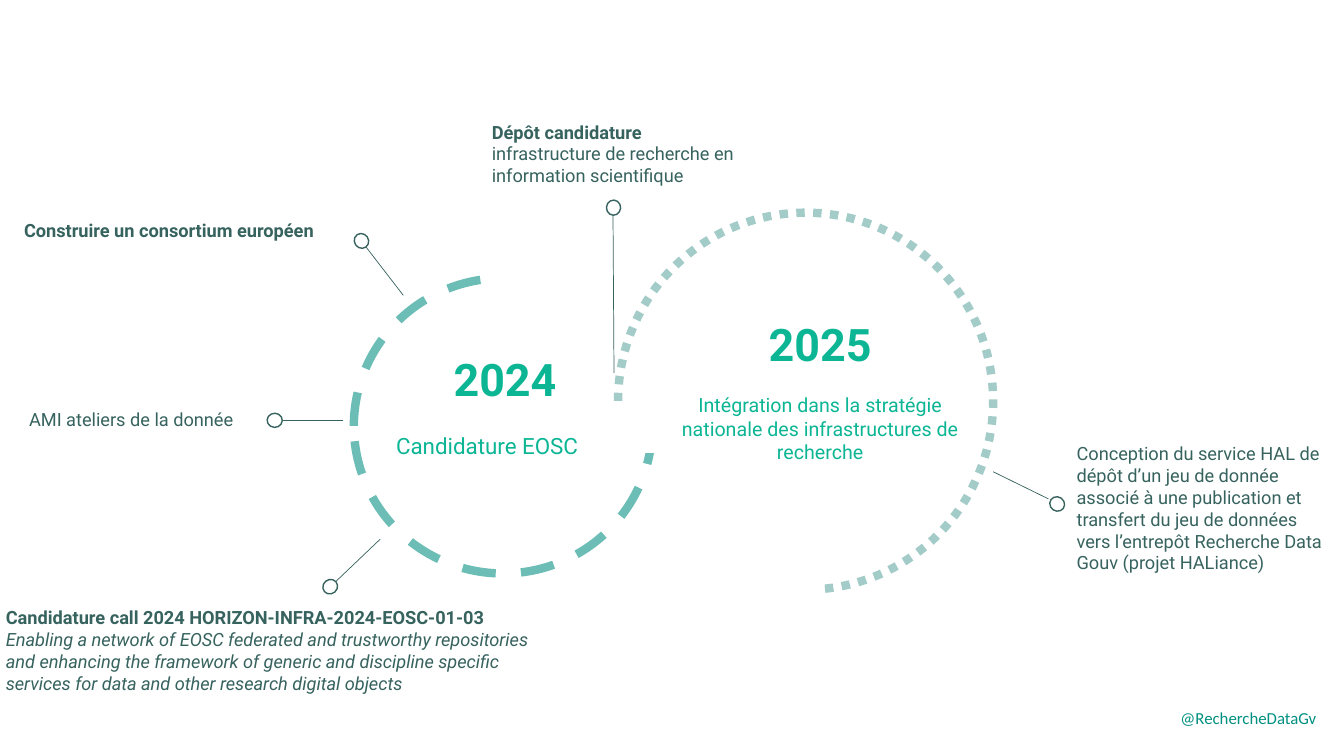
"""Build the 2024-2025 roadmap slide: two dashed year circles with pinned milestones."""
from pptx import Presentation
from pptx import util as u
from pptx.dml import color
from pptx.enum import dml, shapes, text
from pptx.oxml.ns import qn
from lxml import etree

THEME = {
    "white": color.RGBColor.from_string("FFFFFF"),
    "ink": color.RGBColor.from_string("37635F"),
    "year": color.RGBColor.from_string("0CB695"),
    "handle": color.RGBColor.from_string("009081"),
    "ring_2024": color.RGBColor.from_string("6BBDB5"),
    "ring_2025": color.RGBColor.from_string("A3CCC8"),
    "font": "Roboto", "handle_font": "Calibri",
    "year_size": 32, "goal_2024_size": 16, "goal_2025_size": 14,
    "milestone_size": 13, "handle_size": 12,
}


def add_figure(kind, box, fill=None, line=None, width=1, rotation=0):
    figure = slide.shapes.add_shape(kind, *map(u.Inches, box))
    figure.shadow.inherit = False
    figure.rotation = rotation
    for part, tint in ((figure.fill, fill), (figure.line.fill, line)):
        if tint is None:
            part.background()
        else:
            part.solid()
            part.fore_color.rgb = tint
    if line is not None:
        figure.line.width = u.Pt(width)
    return figure


def add_words(box, paragraphs, tint, font=THEME["font"]):
    frame = slide.shapes.add_textbox(*map(u.Inches, box)).text_frame
    frame.word_wrap = True
    for index, (size, align, gap, pieces) in enumerate(paragraphs):
        paragraph = frame.add_paragraph() if index else frame.paragraphs[0]
        paragraph.alignment = align
        if gap:
            paragraph.space_before = u.Pt(gap)
        paragraph.font.size = u.Pt(size)
        paragraph.font.name = font
        paragraph.font.color.rgb = tint
        for words, bold, italic in pieces:
            run = paragraph.add_run()
            run.text = words.rstrip("\n")
            run.font.size, run.font.name = u.Pt(size), font
            run.font.color.rgb = tint
            run.font.bold, run.font.italic = bold, italic
            if words.endswith("\n"):
                paragraph.add_line_break()


deck = Presentation()
deck.slide_width, deck.slide_height = u.Inches(13.33), u.Inches(7.5)
slide = deck.slides.add_slide(deck.slide_layouts[6])

LEFT, CENTER = text.PP_ALIGN.LEFT, text.PP_ALIGN.CENTER
RECT, OVAL = shapes.MSO_SHAPE.RECTANGLE, shapes.MSO_SHAPE.OVAL
white, ink = THEME["white"], THEME["ink"]

ring_2024 = add_figure(OVAL, (3.51, 2.76, 2.96, 2.93), None, THEME["ring_2024"], 6)
ring_2024.line.dash_style = dml.MSO_LINE.DASH
add_figure(RECT, (4.92, 2.6, 1.85, 1.89), white, white)

ring_2025 = add_figure(shapes.MSO_SHAPE.PIE, (6.13, 2.11, 3.72, 3.74), white, THEME["ring_2025"], 6, 180)
ring_2025.adjustments[0], ring_2025.adjustments[1] = 0, 162.31
ring_2025.line.dash_style = dml.MSO_LINE.ROUND_DOT
for radius_mask, turn in (((6.22, 3.8, 1.98, 0.36), 0), ((7.11, 4.85, 1.76, 0.37), 90),
                          ((5.96, 3.98, 0.32, 0.11), 0)):
    add_figure(RECT, radius_mask, white, rotation=turn)

years = [
    ((3.83, 3.44, 2.36, 1.45), "2024", "Candidature EOSC", THEME["goal_2024_size"], LEFT, 19),
    ((6.63, 3.09, 3.01, 1.58), "2025",
     "Intégration dans la stratégie nationale des infrastructures de recherche",
     THEME["goal_2025_size"], CENTER, 16.5),
]
for box, year, goal, goal_size, align, gap in years:
    add_words(box, [(THEME["year_size"], CENTER, 0, [(year, True, False)]),
                    (goal_size, align, gap, [(goal, False, False)])], THEME["year"])

milestones = [
    ((3.77, 5.35), (3.33, 5.77), (3.2, 5.75), 140.1, (-0.04, 5.97, 5.63, 1.19), [
        ("Candidature call 2024 HORIZON-INFRA-2024-EOSC-01-03\n", True, False),
        ("Enabling a network of EOSC federated and trustworthy repositories and enhancing "
         "the framework of generic and discipline specific services for data and other "
         "research digital objects", False, True)]),
    ((3.4, 4.17), (2.8, 4.17), (2.65, 4.1), 182.7, (0.19, 4, 2.46, 0.33), [
        ("AMI ateliers de la donnée", False, False)]),
    ((4, 2.93), (3.63, 2.45), (3.51, 2.32), 235.1, (0.14, 2.13, 3.36, 0.76), [
        ("Construire un consortium européen", True, False)]),
    ((6.09, 3.7), (6.08, 2.13), (6.01, 1.99), 273.2, (4.78, 1.15, 2.7, 0.76), [
        ("Dépôt candidature ", True, False),
        ("infrastructure de recherche en information scientifique", False, False)]),
    ((9.85, 4.68), (10.4, 4.95), (10.41, 4.93), 35.4, (10.58, 4.34, 2.76, 1.41), [
        ("Conception du service HAL de dépôt d’un jeu de donnée associé à une publication "
         "et transfert du jeu de données vers l’entrepôt Recherche Data Gouv "
         "(projet HALiance)", False, False)]),
]
for start, end, pin, turn, box, pieces in milestones:
    stem = slide.shapes.add_connector(shapes.MSO_CONNECTOR.STRAIGHT, *map(u.Inches, start + end))
    stem.line.color.rgb = ink
    stem.line.width = u.Pt(0.5)
    etree.SubElement(stem._element.spPr, qn("a:effectLst"))
    add_figure(OVAL, pin + (0.15, 0.14), white, ink, rotation=turn)
    add_words(box, [(THEME["milestone_size"], LEFT, 0, pieces)], ink)

add_words((11.61, 6.97, 1.62, 0.5),
          [(THEME["handle_size"], LEFT, 0, [("@RechercheDataGv", False, False)])],
          THEME["handle"], THEME["handle_font"])

deck.save("out.pptx")
